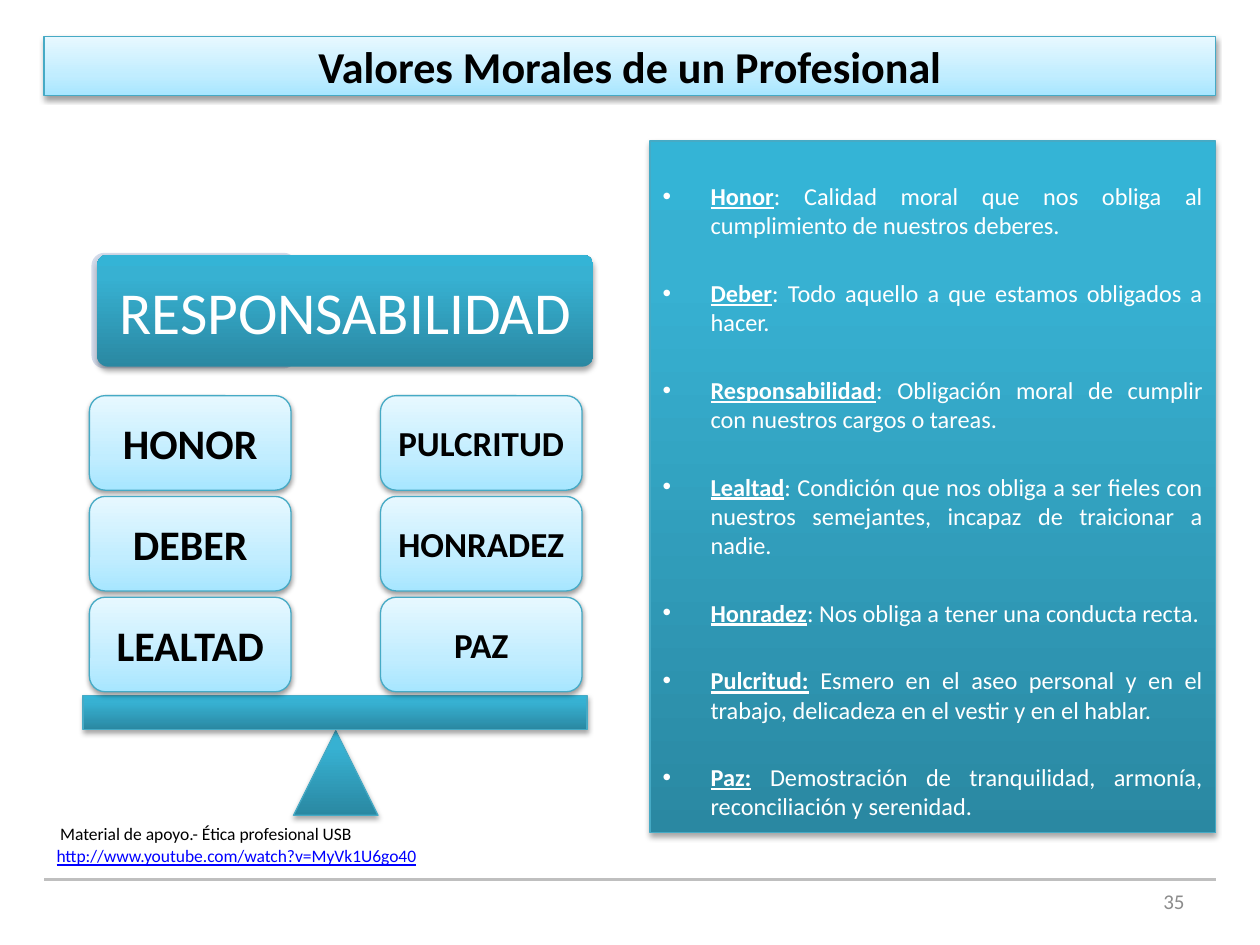
from lxml import etree
from pptx import Presentation
from pptx.dml.color import RGBColor
from pptx.enum.shapes import MSO_CONNECTOR, MSO_SHAPE
from pptx.enum.text import MSO_ANCHOR, MSO_AUTO_SIZE, PP_ALIGN
from pptx.oxml.ns import qn
from pptx.util import Inches, Pt

RECTANGLE = MSO_SHAPE.RECTANGLE
ROUNDED = MSO_SHAPE.ROUNDED_RECTANGLE
TRIANGLE = MSO_SHAPE.ISOSCELES_TRIANGLE
STRAIGHT = MSO_CONNECTOR.STRAIGHT
LEFT, CENTER, RIGHT, JUSTIFY = PP_ALIGN.LEFT, PP_ALIGN.CENTER, PP_ALIGN.RIGHT, PP_ALIGN.JUSTIFY
MIDDLE, TOP = MSO_ANCHOR.MIDDLE, MSO_ANCHOR.TOP
NO_FIT = MSO_AUTO_SIZE.NONE

FONT = "Calibri"
COLORS = {
    "black": "000000", "white": "FFFFFF", "edge": "46AAC5", "plate": "D0D8E8",
    "rule": "BFBFBF", "number": "8C8C8C", "link": "0000FF",
}
LIGHT = {"stops": [(0, "A7E6FF"), (35, "C1EDFF"), (100, "E7F8FF")], "shadow": 38, "drop": 1.6}
DEEP = {"stops": [(0, "2A88A2"), (80, "37B1D2"), (100, "34B4D6")], "shadow": 35, "drop": 1.8}

MARGIN, CONTENT_WIDTH = 0.35, 9.3
CARD_LEFT, CARD_TOP, CARD_WIDTH, CARD_HEIGHT = 0.71, 3.14, 1.6, 0.75
COLUMN_STEP, ROW_STEP = 2.31, 0.8
CARD_COLUMNS = [
    (["HONOR", "DEBER", "LEALTAD"], 24, 0.1),
    (["PULCRITUD", "HONRADEZ", "PAZ"], 20, 0.08),
]
DEFINITIONS = [
    ("Honor", ": Calidad moral que nos obliga al cumplimiento de nuestros deberes."),
    ("Deber", ": Todo aquello a que estamos obligados a hacer."),
    ("Responsabilidad", ": Obligación moral de cumplir con nuestros cargos o tareas."),
    ("Lealtad", ": Condición que nos obliga a ser fieles con nuestros semejantes, "
                "incapaz de traicionar a nadie."),
    ("Honradez", ": Nos obliga a tener una conducta recta."),
    ("Pulcritud:", " Esmero en el aseo personal y en el trabajo, "
                   "delicadeza en el vestir y en el hablar."),
    ("Paz:", " Demostración de tranquilidad, armonía, reconciliación y serenidad."),
]


def rgb(name):
    return RGBColor.from_string(COLORS[name])


def add_color(parent, value, alpha=None):
    color = etree.SubElement(parent, qn("a:srgbClr"), val=value)
    if alpha is not None:
        etree.SubElement(color, qn("a:alpha"), val=str(alpha * 1000))


def paint(shape, theme, edged=True):
    shape.fill.gradient()
    shape.fill.gradient_angle = 90
    stops = shape._element.spPr.find(qn("a:gradFill")).find(qn("a:gsLst"))
    for stop in list(stops):
        stops.remove(stop)
    for position, value in theme["stops"]:
        add_color(etree.SubElement(stops, qn("a:gs"), pos=str(position * 1000)), value)
    if edged:
        shape.line.color.rgb = rgb("edge")
        shape.line.width = Pt(0.75)
    else:
        shape.line.fill.background()
    shape.shadow.inherit = False
    effects = shape._element.spPr.find(qn("a:effectLst"))
    shadow = etree.SubElement(
        effects, qn("a:outerShdw"), blurRad=str(Pt(3.1)), dist=str(Pt(theme["drop"])),
        dir="5400000", rotWithShape="0")
    add_color(shadow, COLORS["black"], theme["shadow"])


def place(shape, left, top, width, height):
    shape.left, shape.top = Inches(left), Inches(top)
    shape.width, shape.height = Inches(width), Inches(height)


def style(span, size, color, bold=False, underline=False):
    span.font.name = FONT
    span.font.size = Pt(size)
    span.font.color.rgb = rgb(color)
    span.font.bold = bold
    span.font.underline = underline


def write(shape, text, size, color, align=CENTER, anchor=MIDDLE, inset=None, wrap=True, **looks):
    frame = shape.text_frame
    frame.text = text
    frame.word_wrap = wrap
    frame.auto_size = NO_FIT
    frame.vertical_anchor = anchor
    if inset is not None:
        frame.margin_left = frame.margin_right = Inches(inset)
        frame.margin_top = frame.margin_bottom = Inches(inset)
    para = frame.paragraphs[0]
    para.alignment = align
    style(para.runs[0], size, color, **looks)


def add_block(page, kind, bounds, theme, edged=True):
    block = page.shapes.add_shape(kind, *map(Inches, bounds))
    paint(block, theme, edged)
    return block


def add_label(page, bounds, text, size, color, **options):
    box = page.shapes.add_textbox(*map(Inches, bounds))
    write(box, text, size, color, **options)


def add_rule(page):
    rule = page.shapes.add_connector(
        STRAIGHT, Inches(MARGIN), Inches(6.98), Inches(MARGIN + CONTENT_WIDTH), Inches(6.98))
    rule.line.color.rgb = rgb("rule")
    rule.line.width = Pt(2)
    etree.SubElement(rule._element.spPr, qn("a:effectLst"))


def add_plate(page):
    plate = page.shapes.add_shape(ROUNDED, *map(Inches, (0.74, 2.02, 1.6, 0.89)))
    plate.adjustments[0] = 0.1
    plate.shadow.inherit = False
    plate.fill.solid()
    plate.fill.fore_color.rgb = rgb("plate")
    plate.line.color.rgb = rgb("plate")
    plate.line.width = Pt(2)
    for color in plate._element.spPr.iter(qn("a:srgbClr")):
        etree.SubElement(color, qn("a:alpha"), val="90000")


def add_balance(page):
    add_plate(page)
    banner = add_block(page, ROUNDED, (0.77, 2.02, 3.94, 0.89), DEEP, edged=False)
    banner.adjustments[0] = 0.1
    write(banner, "RESPONSABILIDAD", 34, "white", inset=0.14)
    add_block(page, TRIANGLE, (2.33, 5.8, 0.67, 0.67), DEEP)
    add_block(page, RECTANGLE, (0.66, 5.52, 4, 0.27), DEEP)
    for column, (names, size, inset) in enumerate(CARD_COLUMNS):
        for row, name in enumerate(names):
            bounds = (CARD_LEFT + column * COLUMN_STEP, CARD_TOP + row * ROW_STEP,
                      CARD_WIDTH, CARD_HEIGHT)
            write(add_block(page, ROUNDED, bounds, LIGHT), name, size, "black",
                  inset=inset, bold=True)


def fill_definitions(body):
    place(body, 5.16, 1.12, 4.49, 5.49)
    paint(body, DEEP)
    frame = body.text_frame
    frame.auto_size = NO_FIT
    frame.vertical_anchor = TOP
    frame.margin_top = Inches(0.32)
    for index, (term, meaning) in enumerate(DEFINITIONS):
        para = frame.add_paragraph() if index else frame.paragraphs[0]
        para.alignment = JUSTIFY
        para.space_before = Pt(22 if index else 0)
        properties = para._p.get_or_add_pPr()
        properties.set("marL", str(Inches(0.38)))
        properties.set("indent", str(-Inches(0.38)))
        para.font.size = Pt(13.9)
        for text, marked in ((term, True), (meaning, False)):
            span = para.add_run()
            span.text = text
            style(span, 13.9, "white", bold=marked, underline=marked)


def main():
    deck = Presentation()
    deck.slide_width, deck.slide_height = Inches(10), Inches(7.5)
    page = deck.slides.add_slide(deck.slide_layouts[1])
    add_rule(page)
    title = page.shapes.title
    place(title, MARGIN, 0.29, CONTENT_WIDTH, 0.47)
    paint(title, LIGHT)
    write(title, "Valores Morales de un Profesional", 25.2, "black", bold=True)
    add_balance(page)
    fill_definitions(page.placeholders[1])
    add_label(page, (7.17, 6.95, 2.33, 0.4), "35", 12, "number", align=RIGHT)
    add_label(page, (MARGIN, 6.66, 5.51, 0.27), "http://www.youtube.com/watch?v=MyVk1U6go40",
              10, "link", align=LEFT, anchor=TOP, underline=True)
    add_label(page, (0.38, 6.48, 2.56, 0.27), "Material de apoyo.- Ética profesional USB",
              10, "black", align=LEFT, anchor=TOP, wrap=False)
    deck.save("out.pptx")


if __name__ == "__main__":
    main()
